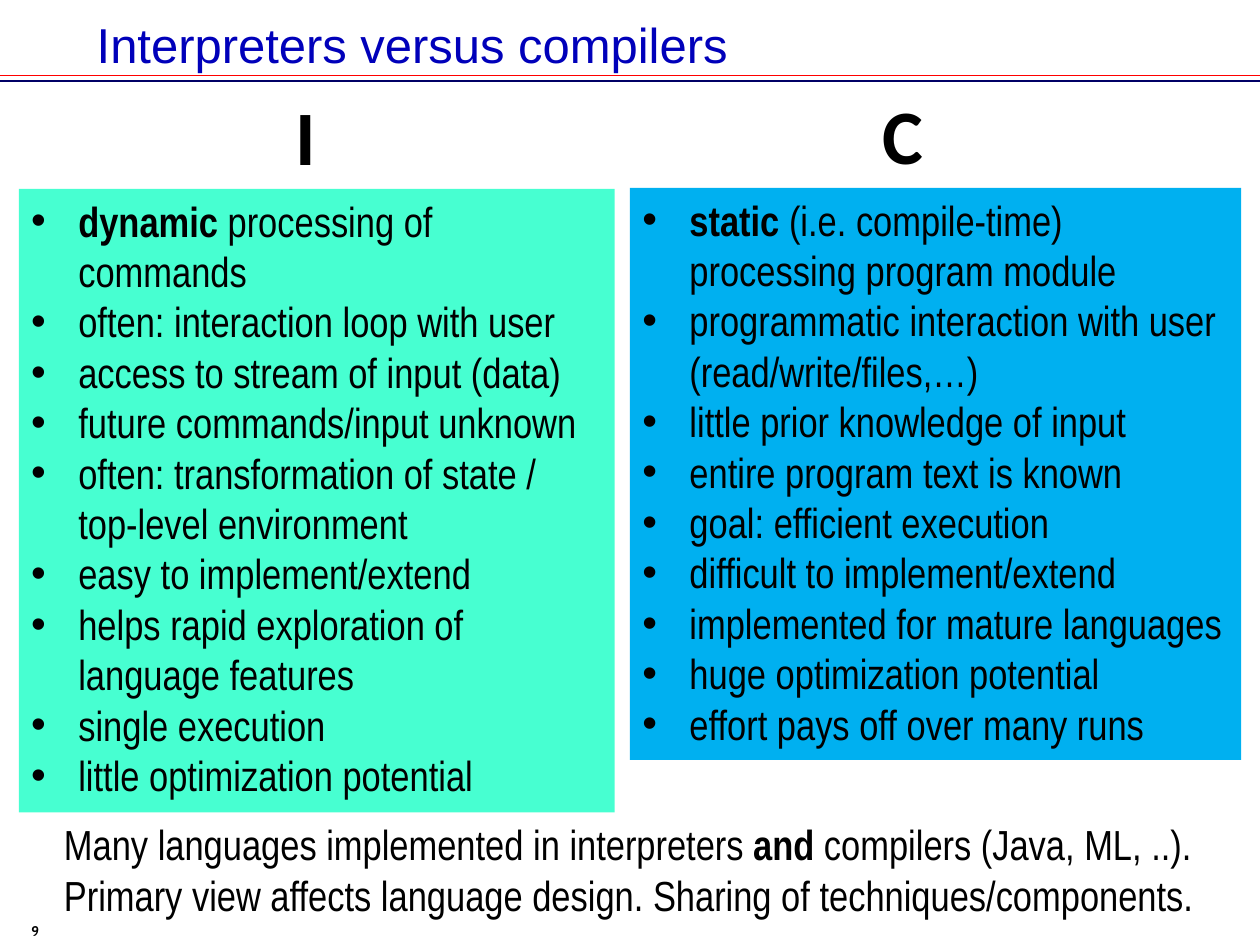
import dataclasses

import pptx
import pptx.dml.color
import pptx.enum.shapes
import pptx.enum.text
import pptx.oxml.ns
import pptx.util
from lxml import etree

Cm = pptx.util.Cm
Align = pptx.enum.text.PP_ALIGN
Anchor = pptx.enum.text.MSO_ANCHOR


@dataclasses.dataclass(frozen=True)
class Theme:
    ink: str = "000000"
    title: str = "0000BA"
    upper_rule: str = "FF0000"
    lower_rule: str = "000066"
    interpreter: str = "47FFD1"
    compiler: str = "00B0F0"
    title_size: int = 28
    letter_size: int = 44
    body_size: int = 24
    number_size: int = 8
    title_font: str = "Arial"
    letter_font: str = "Calibri"
    body_font: str = "Arial Narrow"
    number_font: str = "Cabin"


THEME = Theme()
BULLET_INDENT = Cm(0.95)

INTERPRETER_TRAITS = [
    "**dynamic** processing of commands",
    "often: interaction loop with user",
    "access to stream of input (data)",
    "future commands/input unknown",
    "often: transformation of state / top-level environment",
    "easy to implement/extend",
    "helps rapid exploration of language features",
    "single execution",
    "little optimization potential",
]
COMPILER_TRAITS = [
    "**static** (i.e. compile-time) processing program module",
    "programmatic interaction with user (read/write/files,…)",
    "little prior knowledge of input",
    "entire program text is known",
    "goal: efficient execution",
    "difficult to implement/extend",
    "implemented for mature languages",
    "huge optimization potential",
    "effort pays off over many runs",
]
SUMMARY = [
    "Many languages implemented in interpreters **and** compilers (Java, ML, ..).",
    "Primary view affects language design. Sharing of techniques/components.",
]


def rgb(value):
    return pptx.dml.color.RGBColor.from_string(value)


def add_bullet(paragraph):
    properties = paragraph._p.get_or_add_pPr()
    properties.set("marL", str(BULLET_INDENT))
    properties.set("indent", str(-BULLET_INDENT))
    for tag, attribute, value in (("a:buFont", "typeface", "Arial"),
                                  ("a:buChar", "char", "•")):
        mark = etree.SubElement(properties, pptx.oxml.ns.qn(tag))
        mark.set(attribute, value)


def write_text(paragraph, text, *, size=THEME.body_size, font=THEME.body_font,
               color=THEME.ink, bold=False, align=Align.LEFT, bullet=False):
    """Write text into a paragraph; **marked** words are bold, newlines break."""
    paragraph.alignment = align
    if bullet:
        add_bullet(paragraph)
    for index, part in enumerate(text.split("**")):
        for line_index, line in enumerate(part.split("\n")):
            if line_index:
                paragraph.add_line_break()
            if not line:
                continue
            run = paragraph.add_run()
            run.text = line
            run.font.size = pptx.util.Pt(size)
            run.font.name = font
            run.font.bold = bold or index % 2 == 1
            run.font.color.rgb = rgb(color)


def add_label(slide, box, text, *, anchor=Anchor.TOP, wrap=True, **text_format):
    frame = slide.shapes.add_textbox(*map(Cm, box)).text_frame
    frame.word_wrap = wrap
    frame.vertical_anchor = anchor
    write_text(frame.paragraphs[0], text, **text_format)


def add_header(slide, box, title):
    left, top, width, height = box
    # Double rule across the slide
    for offset, color in ((1.52, THEME.upper_rule), (1.63, THEME.lower_rule)):
        y = Cm(top + offset)
        rule = slide.shapes.add_connector(
            pptx.enum.shapes.MSO_CONNECTOR.STRAIGHT, Cm(left), y, Cm(left + width), y)
        rule.line.color.rgb = rgb(color)
        rule.line.width = pptx.util.Pt(1)
        etree.SubElement(rule._element.spPr, pptx.oxml.ns.qn("a:effectLst"))
    # Title
    add_label(slide, (left + 1.7, top + 0.25, width - 3.43, height - 0.38), title,
              anchor=Anchor.MIDDLE, size=THEME.title_size, font=THEME.title_font,
              color=THEME.title)


def add_column(slide, box, letter, letter_offset, traits, fill):
    left, top, width, height = box
    # Heading letter
    add_label(slide, (left + letter_offset, top - 2.15, 4.24, 2.13), letter,
              size=THEME.letter_size, font=THEME.letter_font, bold=True,
              align=Align.CENTER)
    # Coloured panel with bullets
    panel = slide.shapes.add_shape(
        pptx.enum.shapes.MSO_SHAPE.RECTANGLE, *map(Cm, box))
    panel.shadow.inherit = False
    panel.fill.solid()
    panel.fill.fore_color.rgb = rgb(fill)
    panel.line.fill.background()
    frame = panel.text_frame
    frame.word_wrap = True
    frame.vertical_anchor = Anchor.TOP
    for index, trait in enumerate(traits):
        paragraph = frame.add_paragraph() if index else frame.paragraphs[0]
        write_text(paragraph, trait, bullet=True)


def add_footer(slide, box):
    left, top, width, height = box
    # Summary
    add_label(slide, (left + 1.04, top, width - 1.88, 2.31), "\n".join(SUMMARY),
              wrap=False)
    # Slide number
    add_label(slide, (left, top + height - 0.58, 1.04, 0.58), "9",
              size=THEME.number_size, font=THEME.number_font, bold=True,
              align=Align.RIGHT)


def main():
    deck = pptx.Presentation()
    deck.slide_width, deck.slide_height = Cm(25.4), Cm(19.05)
    slide = deck.slides.add_slide(deck.slide_layouts[6])
    add_header(slide, (0, 0, 25.4, 1.65), "Interpreters versus compilers")
    add_column(slide, (0.38, 3.81, 12.01, 12.57), "I", 3.66,
               INTERPRETER_TRAITS, THEME.interpreter)
    add_column(slide, (12.7, 3.79, 12.32, 11.53), "C", 3.38,
               COMPILER_TRAITS, THEME.compiler)
    add_footer(slide, (0, 16.38, 25.4, 2.67))
    deck.save("out.pptx")


if __name__ == "__main__":
    main()
